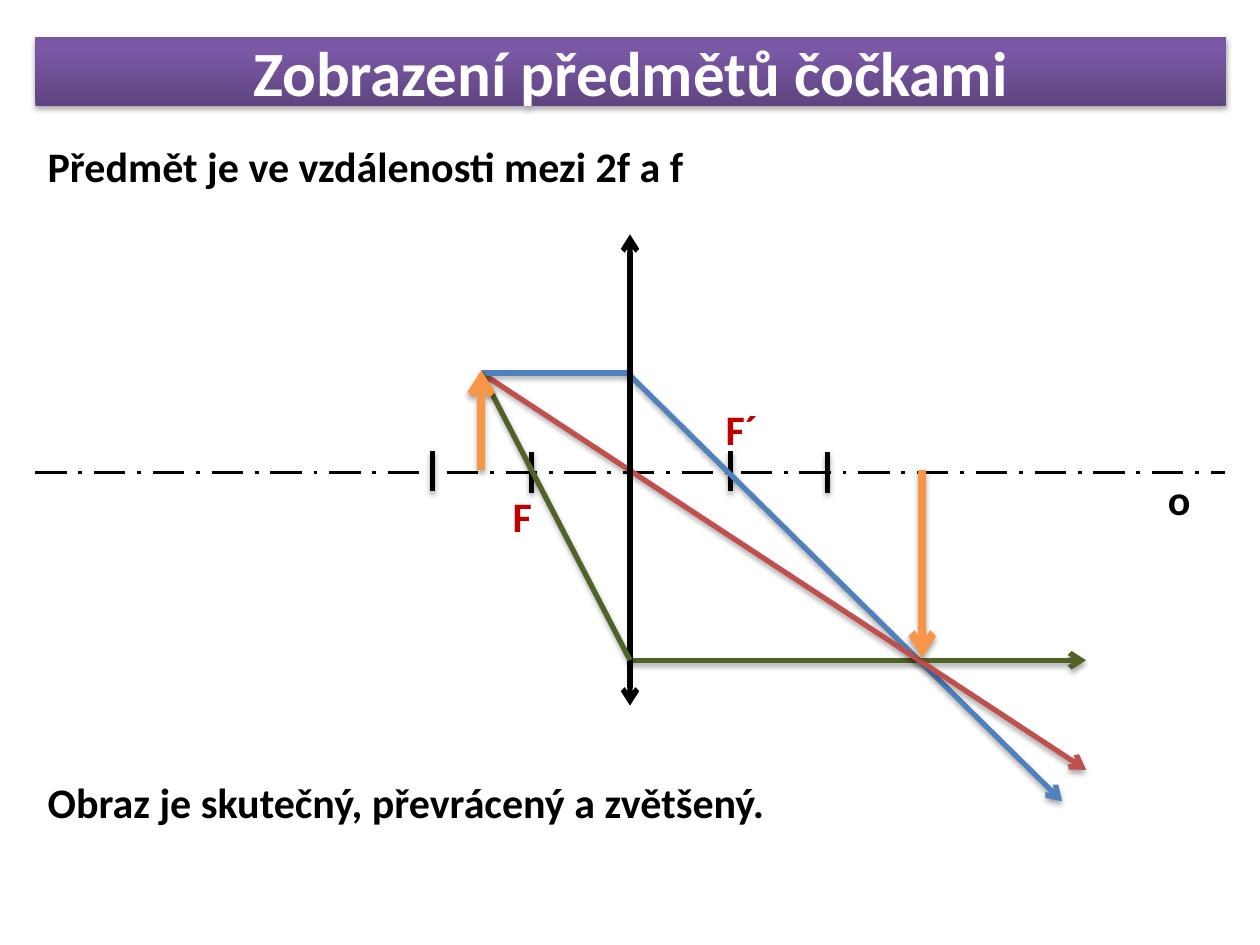
import copy

import pptx
import pptx.dml.color
import pptx.enum.dml
import pptx.enum.shapes
import pptx.enum.text
import pptx.oxml
import pptx.oxml.ns
import pptx.util
from pptx.util import Inches

BLACK, WHITE, RED, ORANGE = "000000", "FFFFFF", "C00000", "F79646"
BLUE_RAY, RED_RAY, GREEN_RAY = "4F81BD", "C0504D", "4F6228"
EFFECTS = f'<a:effectLst {pptx.oxml.ns.nsdecls("a")}>{{}}</a:effectLst>'
SHADOW = (
    '<a:outerShdw blurRad="40000" dist="23000" dir="5400000" rotWithShape="0">'
    '<a:srgbClr val="000000"><a:alpha val="35000"/></a:srgbClr></a:outerShdw>'
)


def color(hex_string):
    return pptx.dml.color.RGBColor.from_string(hex_string)


class LensSlide:
    font_name = "Calibri"

    def __init__(self, presentation):
        self.slide = presentation.slides.add_slide(presentation.slide_layouts[6])

    def set_effects(self, shape, shadow):
        properties = shape._element.spPr
        for old in properties.findall(pptx.oxml.ns.qn("a:effectLst")):
            properties.remove(old)
        properties.append(pptx.oxml.parse_xml(EFFECTS.format(SHADOW if shadow else "")))

    def set_text(self, text_frame, text, size, hex_string):
        text_frame.text = text
        text_frame.word_wrap = True
        font = text_frame.paragraphs[0].runs[0].font
        font.name = self.font_name
        font.size = pptx.util.Pt(size)
        font.bold = True
        font.color.rgb = color(hex_string)

    def title(self, text, left, top, width, height, gradient):
        shape = self.slide.shapes.add_shape(
            pptx.enum.shapes.MSO_SHAPE.RECTANGLE,
            Inches(left), Inches(top), Inches(width), Inches(height),
        )
        shape.fill.gradient()
        shape.fill.gradient_angle = 90
        stop_list = shape._element.spPr.find(".//" + pptx.oxml.ns.qn("a:gsLst"))
        stop_list.insert(1, copy.deepcopy(stop_list[0]))
        for stop, (position, hex_string) in zip(shape.fill.gradient_stops, gradient):
            stop.position = position
            stop.color.rgb = color(hex_string)
        shape.line.fill.background()
        self.set_effects(shape, True)
        self.set_text(shape.text_frame, text, 36, WHITE)
        shape.text_frame.vertical_anchor = pptx.enum.text.MSO_ANCHOR.MIDDLE
        shape.text_frame.paragraphs[0].alignment = pptx.enum.text.PP_ALIGN.CENTER

    def label(self, text, left, top, width=0.51, hex_string=BLACK):
        box = self.slide.shapes.add_textbox(
            Inches(left), Inches(top), Inches(width), Inches(0.5)
        )
        self.set_text(box.text_frame, text, 24, hex_string)
        box.text_frame.auto_size = pptx.enum.text.MSO_AUTO_SIZE.SHAPE_TO_FIT_TEXT

    def line(self, start, end, hex_string=BLACK, width=3, arrows=(), shadow=True, dash=None):
        connector = self.slide.shapes.add_connector(
            pptx.enum.shapes.MSO_CONNECTOR.STRAIGHT, *map(Inches, (*start, *end))
        )
        connector.line.color.rgb = color(hex_string)
        connector.line.width = pptx.util.Pt(width)
        if dash:
            connector.line.dash_style = dash
        for arrow in arrows:
            connector.line._get_or_add_ln().append(pptx.oxml.parse_xml(
                f'<a:{arrow} {pptx.oxml.ns.nsdecls("a")} type="arrow"/>'
            ))
        self.set_effects(connector, shadow)

    def tick(self, x, top):
        self.line((x, top), (x, top + 0.32))


def main():
    presentation = pptx.Presentation()
    presentation.slide_width = Inches(10)
    presentation.slide_height = Inches(7.5)
    lens = LensSlide(presentation)

    left, width, axis_y, lens_x = 0.28, 9.45, 3.75, 5
    object_tip = (3.82, 2.96)
    lens_bottom = (lens_x, 5.24)
    end_arrow = ("tailEnd",)

    lens.title("Zobrazení předmětů čočkami", left, 0.29, width, 0.55,
               ((0, "5F4480"), (0.8, "7B58A6"), (1, "7C57A8")))
    lens.label("Předmět je ve vzdálenosti mezi 2f a f", left, 1.07, width)
    lens.line((left, axis_y), (10 - left, axis_y), width=2.25, shadow=False,
              dash=pptx.enum.dml.MSO_LINE.LONG_DASH_DOT)
    lens.tick(5.8, 3.58)
    lens.label("F", 3.97, 3.84, hex_string=RED)
    lens.line(lens_bottom, (8.62, 5.24), GREEN_RAY, arrows=end_arrow)
    lens.line((4.98, 2.96), (8.43, 6.36), BLUE_RAY, arrows=end_arrow)
    lens.line(object_tip, (8.62, 6.11), RED_RAY, arrows=end_arrow)
    lens.label("o", 9.17, 3.71)
    lens.line(object_tip, (lens_x, 2.96), BLUE_RAY)
    lens.line((lens_x, 5.6), (lens_x, 1.86), arrows=("headEnd", "tailEnd"), shadow=False)
    lens.label("F´", 5.66, 3.15, hex_string=RED)
    lens.tick(4.22, 3.59)
    lens.line(object_tip, lens_bottom, GREEN_RAY)
    lens.tick(3.43, 3.58)
    lens.tick(6.57, 3.59)
    lens.line((7.32, 3.73), (7.32, 5.22), ORANGE, 4.5, end_arrow)
    lens.label("Obraz je skutečný, převrácený a zvětšený.", left, 6.11, width)
    lens.line((3.82, 3.73), (3.82, 2.94), ORANGE, 4.5, end_arrow)

    presentation.save("out.pptx")


if __name__ == "__main__":
    main()
